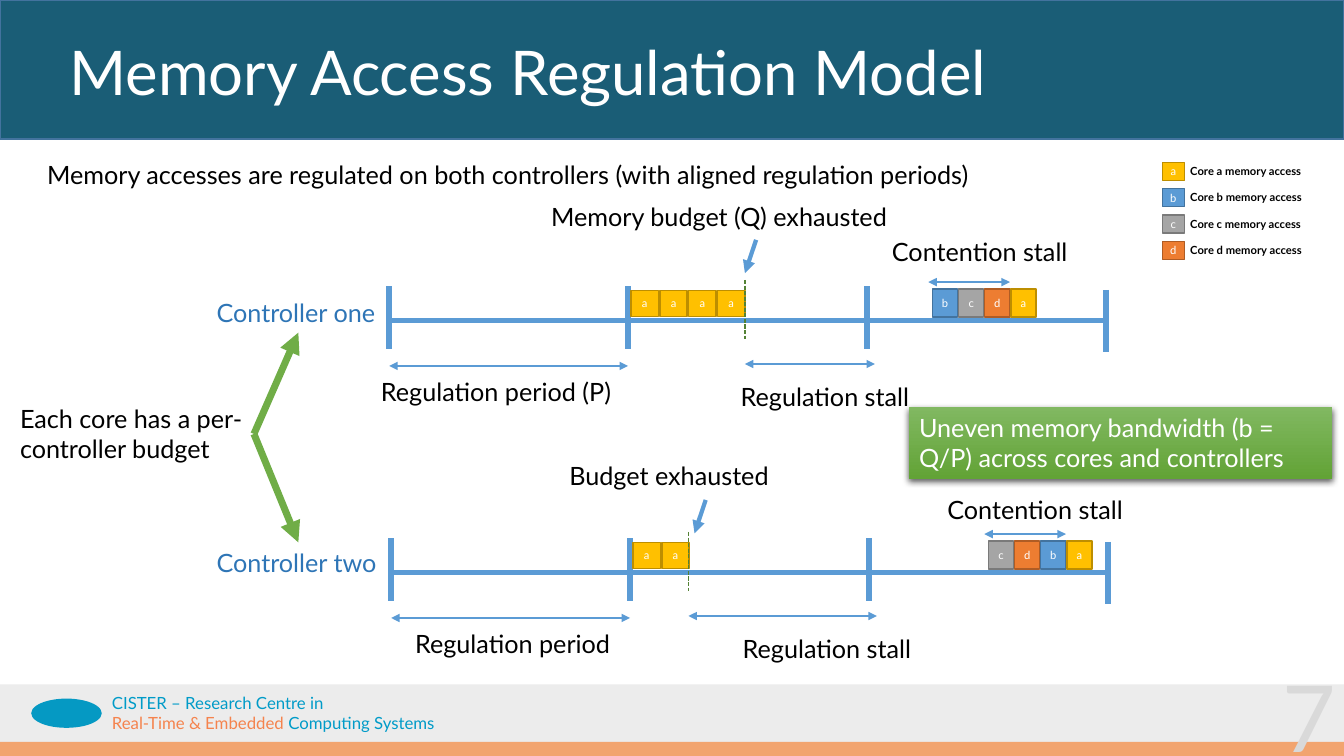
from lxml import etree
from pptx import Presentation
from pptx.dml import color
from pptx.enum import dml, shapes, text
from pptx.oxml import ns
from pptx.util import Pt

FONT = "Lato"
BLUE, GREEN, BLACK, WHITE = "5B9BD5", "70AD47", "000000", "FFFFFF"
LABEL_BLUE, CYAN, ORANGE = "2E75B6", "009BC8", "F5834D"
CORES = {
    "a": ("FFC000", "BD8E00"),
    "b": (BLUE, "43739E"),
    "c": ("A5A5A5", "7A7A7A"),
    "d": ("ED7D31", "AF5C24"),
}
PERIOD = 170.65


def rgb(value):
    """Turn a hex string into a colour."""
    return color.RGBColor.from_string(value)


def add_xml(parent, tag, **attributes):
    """Append a DrawingML element and return it."""
    return etree.SubElement(parent, ns.qn(tag), attributes)


def style_run(run, size, hex_color, bold=False):
    """Set the font of one run."""
    run.font.name = FONT
    run.font.size = Pt(size)
    run.font.bold = bold
    run.font.color.rgb = rgb(hex_color)


def write(text_frame, content, size, hex_color, bold=False):
    """Fill a text frame with one styled paragraph."""
    text_frame.word_wrap = True
    text_frame.text = content
    paragraph = text_frame.paragraphs[0]
    style_run(paragraph.runs[0], size, hex_color, bold)
    return paragraph


def clear_margins(text_frame):
    """Remove the insets of a text frame."""
    text_frame.margin_left = text_frame.margin_right = 0
    text_frame.margin_top = text_frame.margin_bottom = 0


def add_label(slide, content, left, top, width, height=28.8, size=18,
              hex_color=BLACK, bold=False):
    """Add a text box with one paragraph."""
    shape = slide.shapes.add_textbox(Pt(left), Pt(top), Pt(width), Pt(height))
    write(shape.text_frame, content, size, hex_color, bold)
    return shape


def add_shape(slide, left, top, width, height, fill, line=None,
              kind=shapes.MSO_SHAPE.RECTANGLE):
    """Add a plain filled shape."""
    shape = slide.shapes.add_shape(kind, Pt(left), Pt(top), Pt(width), Pt(height))
    shape.shadow.inherit = False
    shape.fill.solid()
    shape.fill.fore_color.rgb = rgb(fill)
    if line:
        shape.line.color.rgb = rgb(line)
        shape.line.width = Pt(1)
    else:
        shape.line.fill.background()
    return shape


def add_access(slide, core, left, top, width, height):
    """Add the block of one memory access."""
    shape = add_shape(slide, left, top, width, height, *CORES[core])
    clear_margins(shape.text_frame)
    shape.text_frame.vertical_anchor = text.MSO_ANCHOR.MIDDLE
    paragraph = write(shape.text_frame, core, 8, WHITE)
    paragraph.alignment = text.PP_ALIGN.CENTER


def add_line(slide, start, end, width, hex_color=BLUE, arrows=(), dash=None):
    """Add a straight line with optional arrowheads."""
    connector = slide.shapes.add_connector(
        shapes.MSO_CONNECTOR.STRAIGHT, *map(Pt, (*start, *end)))
    connector.line.color.rgb = rgb(hex_color)
    connector.line.width = Pt(width)
    if dash:
        connector.line.dash_style = dash
    for arrow in arrows:
        add_xml(connector.line._ln, arrow, type="triangle")
    add_xml(connector._element.spPr, "a:effectLst")
    return connector


def add_span(slide, left, right, y):
    """Add a horizontal double arrow."""
    add_line(slide, (left, y), (right, y), 2, arrows=("a:headEnd", "a:tailEnd"))


def add_timeline(slide, left, y, budget, exhausted, pointer, contention, order):
    """Draw the regulated accesses of one controller along its axis."""
    add_line(slide, (left, y), (left + 512.6, y), 3)
    for index in range(4):
        x = left + index * PERIOD
        top = y - (22 if index == 3 else 24.5)
        add_line(slide, (x, top), (x, top + 44.6), 4)
    for index in range(budget):
        add_access(slide, "a", left + 172.8 + index * 20.6, y - 21.6, 19.5, 18.7)
    for index, core in enumerate(order):
        add_access(slide, core, contention + index * 18.7, y - 22.4, 18, 20)
    add_line(slide, (exhausted, y - 29), (exhausted, y + 13.5), 1, "548235",
             dash=dml.MSO_LINE.SQUARE_DOT)
    tip_x, tip_y = pointer
    add_line(slide, (tip_x + 8, tip_y - 23.8), pointer, 3, arrows=("a:tailEnd",))
    add_span(slide, left, left + PERIOD, y + 32.4)
    add_span(slide, exhausted, left + 347, y + 31)
    add_span(slide, contention - 2.9, contention + 55.4, y - 27.5)


def add_legend(slide):
    """List the colour of each core."""
    for index, core in enumerate(CORES):
        top = 115.9 + index * 18.8
        add_access(slide, core, 830.2, top, 15.8, 13)
        add_label(slide, f"Core {core} memory access", 843.1, top - 2.1, 105.1,
                  17.3, 8, bold=True)


def add_budget_note(slide):
    """Point from the budget note to both controller labels."""
    note = add_label(slide, "Each core has a per-controller budget",
                     7.2, 284.4, 174.2, 51.1)
    targets = (("Controller one", 208.8, 237.6, 2),
               ("Controller two", 387.4, 387.4, 0))
    for name, top, tip, side in targets:
        label = add_label(slide, name, 147.6, top, 131, hex_color=LABEL_BLUE)
        arrow = add_line(slide, (181.4, 310), (213.1, tip), 5, GREEN, ("a:tailEnd",))
        arrow.begin_connect(note, 3)
        arrow.end_connect(label, side)


def add_callout(slide):
    """Add the shaded conclusion box."""
    shape = add_shape(slide, 649.4, 290.9, 302.4, 51.1, GREEN)
    shape.fill.gradient()
    shape.fill.gradient_angle = 270
    for stop, hex_color in zip(shape.fill.gradient_stops, ("81B861", "62A336")):
        stop.color.rgb = rgb(hex_color)
    effects = shape._element.spPr.find(ns.qn("a:effectLst"))
    shadow = add_xml(effects, "a:outerShdw", blurRad=str(Pt(4.5)),
                     dist=str(Pt(1.5)), dir="5400000", algn="ctr", rotWithShape="0")
    shade = add_xml(shadow, "a:srgbClr", val=BLACK)
    add_xml(shade, "a:alpha", val="63000")
    shape.text_frame.vertical_anchor = text.MSO_ANCHOR.TOP
    paragraph = write(
        shape.text_frame,
        "Uneven memory bandwidth (b = Q/P) across cores and controllers", 18, WHITE)
    paragraph.alignment = text.PP_ALIGN.LEFT


def add_frame(slide):
    """Add the title band, the footer and the page number."""
    add_shape(slide, 0, 488.9, 960, 41, "ECECEC")
    add_shape(slide, 0, 0, 960, 99.4, "1A5D76", "43739E")
    add_shape(slide, 0, 529.9, 960, 10.1, "F2A46F")
    add_shape(slide, 22.3, 499, 50.4, 20.9, "0599C3", kind=shapes.MSO_SHAPE.OVAL)

    footer = add_label(slide, "CISTER – Research Centre in", 79.9, 494.6, 236.2,
                       28.8, 12, CYAN).text_frame
    clear_margins(footer)
    paragraph = footer.add_paragraph()
    for content, hex_color in (("Real-Time & Embedded ", ORANGE),
                               ("Computing Systems", CYAN)):
        run = paragraph.add_run()
        run.text = content
        style_run(run, 12, hex_color)

    title = add_label(slide, "Memory Access Regulation Model", 42.5, 17.3, 828,
                      64.1, 44, WHITE).text_frame
    title.vertical_anchor = text.MSO_ANCHOR.BOTTOM
    title.paragraphs[0].line_spacing = 0.9
    number = add_label(slide, "7", 854.6, 468, 106.6, 77, 66, "D9D9D9")
    number.text_frame.paragraphs[0].alignment = text.PP_ALIGN.RIGHT


def main():
    """Build the slide and save it."""
    presentation = Presentation()
    presentation.slide_width, presentation.slide_height = Pt(960), Pt(540)
    slide = presentation.slides.add_slide(presentation.slide_layouts[6])
    add_frame(slide)
    add_legend(slide)
    add_timeline(slide, 278, 229, 4, 532.1, (532.1, 195.1), 666, "bcda")
    add_timeline(slide, 279.4, 409, 2, 491.8, (496.1, 380.9), 706, "cdba")
    for content, left, top, width in (
        ("Memory accesses are regulated on both controllers "
         "(with aligned regulation periods)", 26.6, 110.2, 714.2),
        ("Memory budget (Q) exhausted", 386.6, 140.4, 263.5),
        ("Contention stall", 630, 165.6, 149.8),
        ("Regulation period (P)", 265, 265, 183.6),
        ("Regulation stall", 522, 268.6, 149.8),
        ("Budget exhausted", 399.6, 325.4, 168.5),
        ("Contention stall", 669.6, 349.9, 149.8),
        ("Regulation period", 289.4, 445, 159.8),
        ("Regulation stall", 523.4, 448.6, 149.8),
    ):
        add_label(slide, content, left, top, width)
    add_budget_note(slide)
    add_callout(slide)
    presentation.save("out.pptx")


if __name__ == "__main__":
    main()
